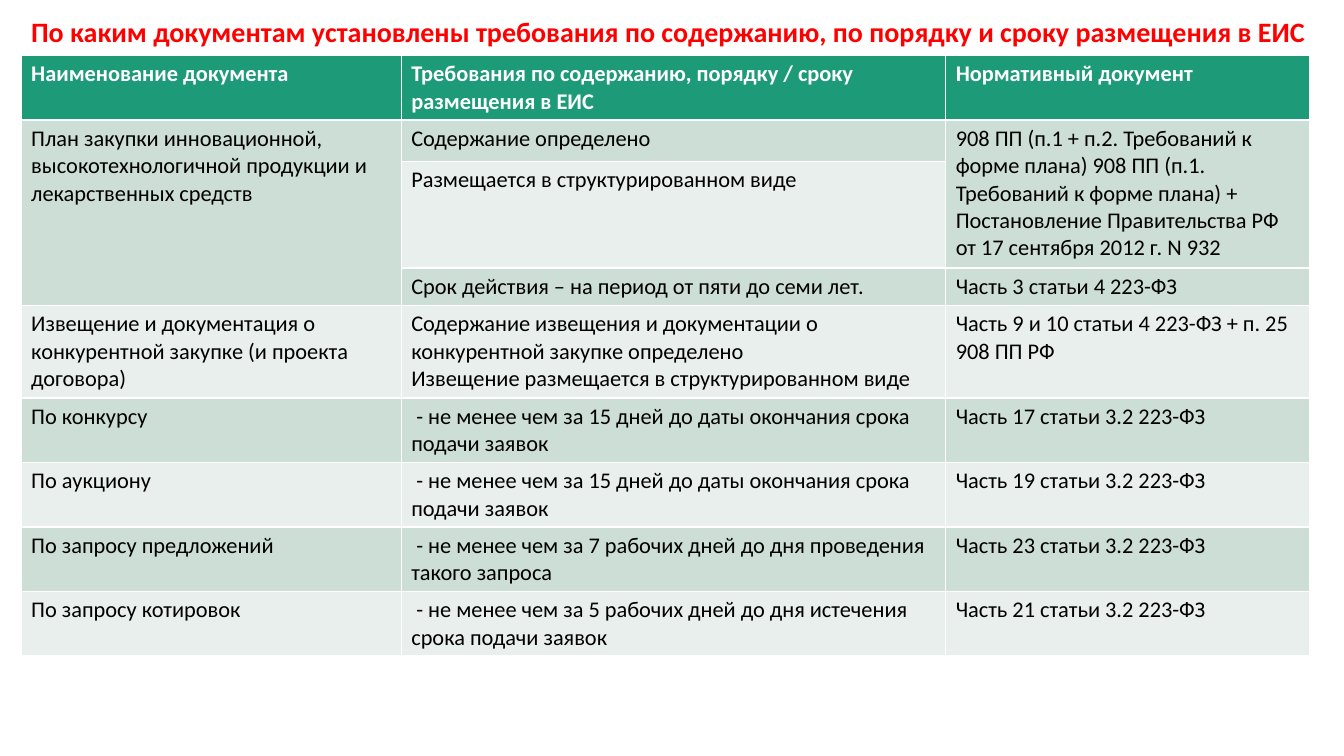
from dataclasses import dataclass

from pptx import Presentation
from pptx.dml.color import RGBColor
from pptx.enum.text import MSO_ANCHOR
from pptx.util import Inches, Pt


@dataclass(frozen=True)
class Theme:
    font: str = "Calibri"
    title_size: int = 20
    table_size: int = 16
    title: str = "FF0000"
    header_text: str = "FFFFFF"
    body_text: str = "000000"
    header_fill: str = "1D9A78"
    odd_fill: str = "CDDED6"
    even_fill: str = "E8EFEC"


theme = Theme()


def format_text(frame, size, color, bold):
    for paragraph in frame.paragraphs:
        for run in paragraph.runs:
            run.font.name = theme.font
            run.font.size = Pt(size)
            run.font.bold = bold
            run.font.color.rgb = RGBColor.from_string(color)


# Slide
prs = Presentation()
prs.slide_width, prs.slide_height = Inches(13.33), Inches(7.5)
slide = prs.slides.add_slide(prs.slide_layouts[6])

# Heading
heading = slide.shapes.add_textbox(
    Inches(0.21), Inches(0.1), Inches(12.95), Inches(0.46)).text_frame
heading.word_wrap = True
heading.vertical_anchor = MSO_ANCHOR.MIDDLE
heading.text = ("По каким документам установлены требования по содержанию, "
                "по порядку и сроку размещения в ЕИС")
heading.paragraphs[0].line_spacing = 0.9
format_text(heading, theme.title_size, theme.title, True)

# Requirements: row height, document, requirement, legal basis
# (an empty string belongs to the merged cell above it)
requirements = [
    (0.64, "Наименование документа",
     "Требования по содержанию, порядку / сроку размещения в ЕИС",
     "Нормативный документ"),
    (0.41, "План закупки инновационной, высокотехнологичной продукции и "
     "лекарственных средств",
     "Содержание определено",
     "908 ПП (п.1 + п.2. Требований к форме плана) 908 ПП (п.1. Требований "
     "к форме плана) + Постановление Правительства РФ от 17 сентября 2012 г. N 932"),
    (1.06, "", "Размещается в структурированном виде", ""),
    (0.37, "", "Срок действия – на период от пяти до семи лет.",
     "Часть 3 статьи 4 223-ФЗ"),
    (0.92, "Извещение и документация о конкурентной закупке (и проекта договора)",
     "Содержание извещения и документации о конкурентной закупке определено\n"
     "Извещение размещается в структурированном виде",
     "Часть 9 и 10 статьи 4 223-ФЗ + п. 25 908 ПП РФ"),
    (0.64, "По конкурсу",
     " - не менее чем за 15 дней до даты окончания срока подачи заявок",
     "Часть 17 статьи 3.2 223-ФЗ"),
    (0.64, "По аукциону",
     " - не менее чем за 15 дней до даты окончания срока подачи заявок",
     "Часть 19 статьи 3.2 223-ФЗ"),
    (0.64, "По запросу предложений",
     " - не менее чем за 7 рабочих дней до дня проведения такого запроса",
     "Часть 23 статьи 3.2 223-ФЗ"),
    (0.64, "По запросу котировок",
     " - не менее чем за 5 рабочих дней до дня истечения срока подачи заявок",
     "Часть 21 статьи 3.2 223-ФЗ"),
]
column_widths = [3.77, 5.4, 3.61]

# Table grid; the default table style draws the white cell borders
table = slide.shapes.add_table(
    len(requirements), len(column_widths), Inches(0.21), Inches(0.55),
    Inches(sum(column_widths)), Inches(sum(row[0] for row in requirements))).table
for column, width in zip(table.columns, column_widths):
    column.width = Inches(width)
table.cell(1, 0).merge(table.cell(3, 0))
table.cell(1, 2).merge(table.cell(2, 2))

# Table contents
for row_index, (height, *texts) in enumerate(requirements):
    table.rows[row_index].height = Inches(height)
    is_header = row_index == 0
    band = theme.odd_fill if row_index % 2 else theme.even_fill
    fill = theme.header_fill if is_header else band
    color = theme.header_text if is_header else theme.body_text
    for column_index, text in enumerate(texts):
        cell = table.cell(row_index, column_index)
        cell.fill.solid()
        cell.fill.fore_color.rgb = RGBColor.from_string(fill)
        if text:
            cell.text_frame.text = text
            format_text(cell.text_frame, theme.table_size, color, is_header)

prs.save("out.pptx")
